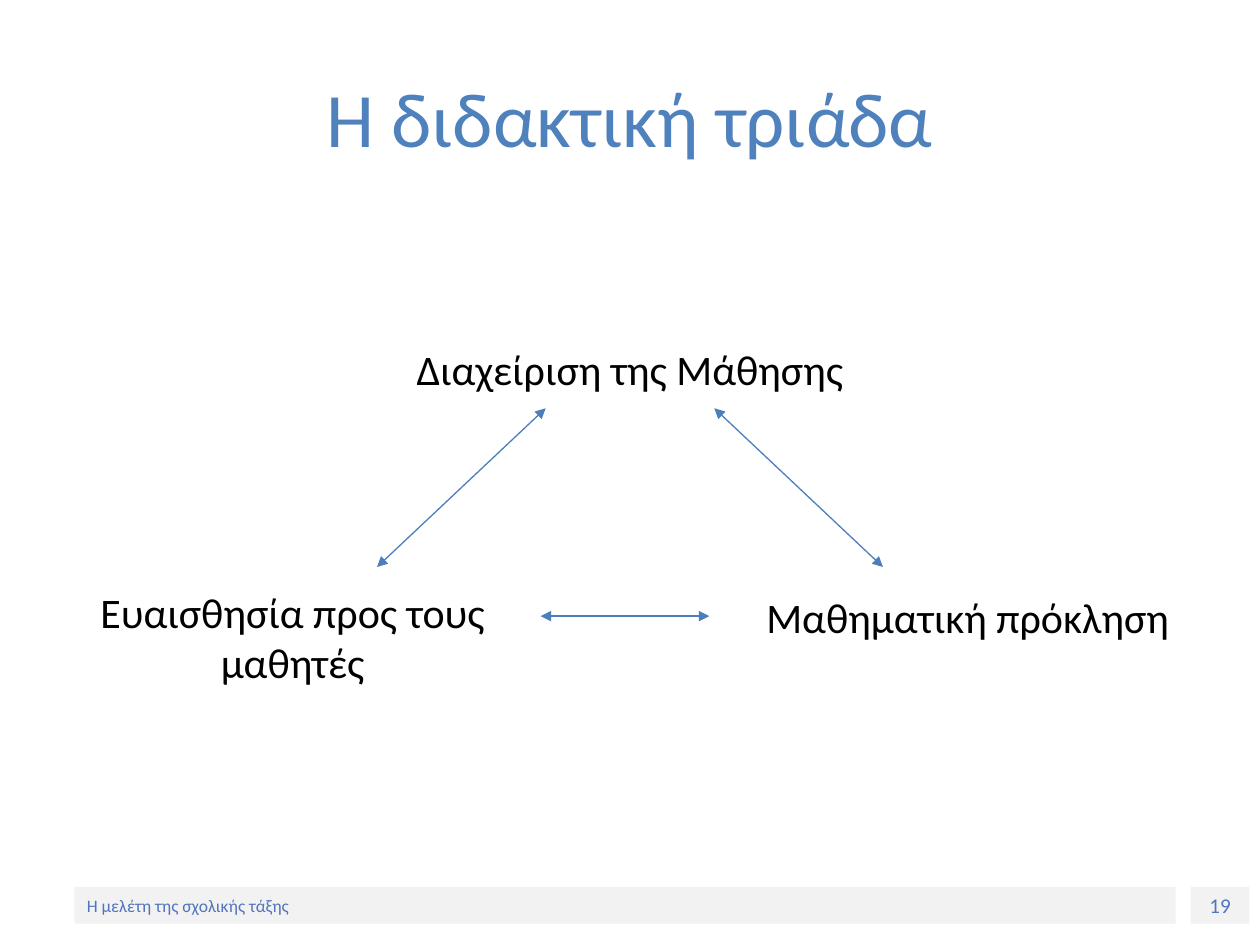
from lxml import etree
from pptx import Presentation, util as u
from pptx.dml.color import RGBColor
from pptx.enum import shapes, text
from pptx.oxml.ns import qn

BLUE = RGBColor(0x4F, 0x81, 0xBD)
LINE = RGBColor(0x4B, 0x7E, 0xBC)
FOOT = RGBColor(0x50, 0x75, 0xBC)
GREY = RGBColor(0xF2, 0xF2, 0xF2)
BLACK = RGBColor(0, 0, 0)
FONT = "Calibri"
LEFT, MID = text.PP_ALIGN.LEFT, text.PP_ALIGN.CENTER

# Content, lengths in cm
WIDE, HIGH = 25.4, 19.05
AXIS = WIDE / 2
TITLE = ("Η διδακτική τριάδα", (1.27, 0.76, 22.86, 3.18))
NODE = 9.2  # width of a corner of the triad
NODES = [  # words, left, top, height
    ("Διαχείριση της Μάθησης", AXIS - NODE / 2, 6.73, 1.4),
    ("Ευαισθησία προς τους μαθητές", 1.3, 11.73, 2.21),
    ("Μαθηματική πρόκληση", 14.91, 11.73, 1.4),
]
NEAR, FAR = 1.7, 5.1  # ends of the slanted arrows, from the axis
ROOF, BASE = 8.23, 11.43
ARROWS = [(AXIS + s * NEAR, ROOF, AXIS + s * FAR, BASE) for s in (-1, 1)]
ARROWS.append((10.9, 12.42, 14.3, 12.42))
BARS = [  # words, size, alignment, left, width
    ("19", 12, MID, 24, 1.19),
    ("Η μελέτη της σχολικής τάξης", 10, LEFT, 1.5, 22.2),
]
BAR_TOP, BAR_HIGH = 17.88, 0.74

deck = Presentation()
deck.slide_width, deck.slide_height = u.Cm(WIDE), u.Cm(HIGH)
slide = deck.slides.add_slide(deck.slide_layouts[6])


def write(shape, words, size, hue, align=MID):
    frame = shape.text_frame
    frame.word_wrap = True
    frame.vertical_anchor = text.MSO_ANCHOR.MIDDLE
    para = frame.paragraphs[0]
    para.alignment = align
    run = para.add_run()
    run.text = words
    run.font.size, run.font.name = u.Pt(size), FONT
    run.font.color.rgb = hue


def label(words, box, size, hue):
    write(slide.shapes.add_textbox(*map(u.Cm, box)), words, size, hue)


def arrow(ends):
    link = slide.shapes.add_connector(
        shapes.MSO_CONNECTOR.STRAIGHT, *map(u.Cm, ends))
    link.line.color.rgb, link.line.width = LINE, u.Pt(0.75)
    stroke = link.line._get_or_add_ln()
    for tip in ("a:headEnd", "a:tailEnd"):
        etree.SubElement(stroke, qn(tip), type="triangle")
    etree.SubElement(link._element.spPr, qn("a:effectLst"))


# Footer bars
for words, size, align, left, wide in BARS:
    bar = slide.shapes.add_shape(
        shapes.MSO_SHAPE.RECTANGLE,
        *map(u.Cm, (left, BAR_TOP, wide, BAR_HIGH)))
    bar.shadow.inherit = False
    bar.fill.solid()
    bar.fill.fore_color.rgb = GREY
    bar.line.fill.background()
    write(bar, words, size, FOOT, align)

# Title
label(*TITLE, 44, BLUE)

# Triad
for ends in ARROWS:
    arrow(ends)
for words, left, top, high in NODES:
    label(words, (left, top, NODE, high), 24, BLACK)

deck.save("out.pptx")
